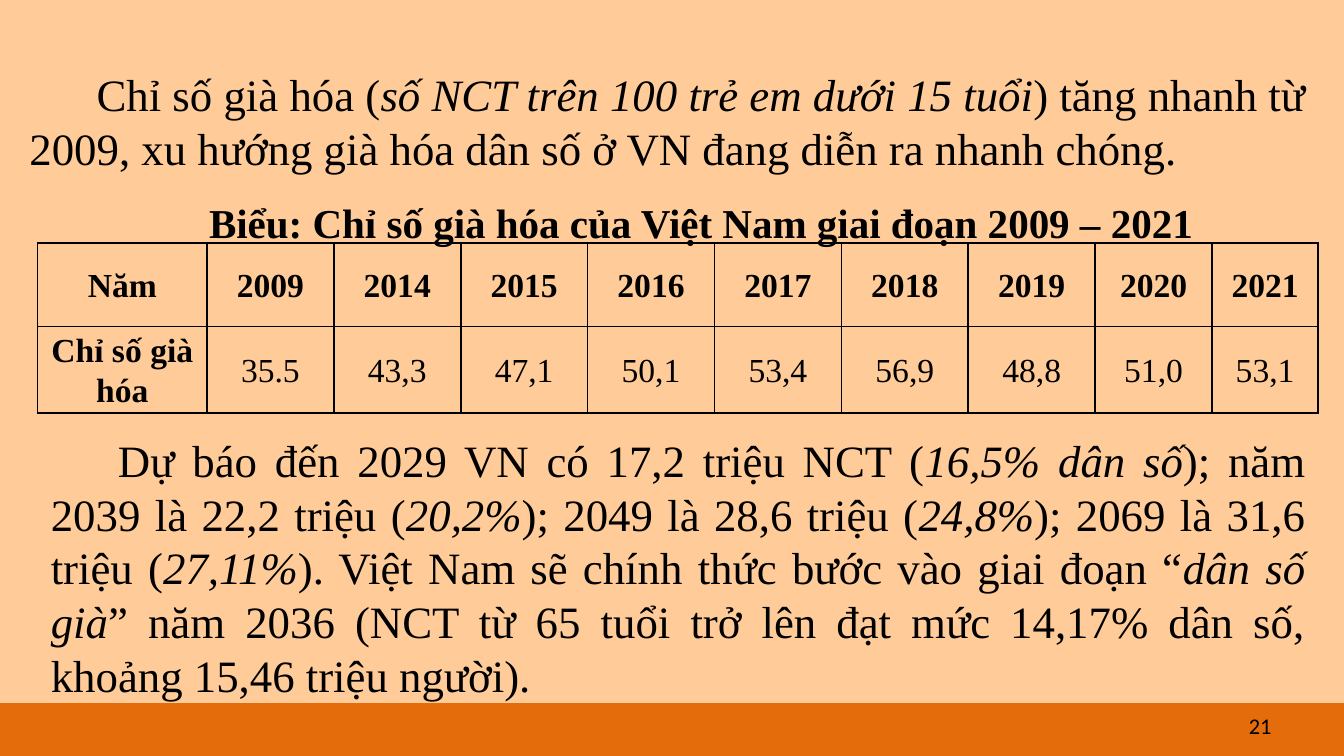
from lxml.etree import SubElement
from pptx import Presentation
from pptx.dml.color import RGBColor
from pptx.enum.shapes import MSO_SHAPE
from pptx.enum.text import MSO_ANCHOR, PP_ALIGN
from pptx.oxml.ns import qn
from pptx.util import Inches, Pt

ORANGE = RGBColor(0xE4, 0x6C, 0x0A)
PEACH = RGBColor(0xFF, 0xCC, 0x99)
BLACK = RGBColor(0, 0, 0)
SERIF = "Times New Roman"

INTRO = [
    "Chỉ số già hóa (", "số NCT trên 100 trẻ em dưới 15 tuổi",
    ") tăng nhanh từ 2009, xu hướng già hóa dân số ở VN đang diễn ra nhanh chóng.",
]
TITLE = "Biểu: Chỉ số già hóa của Việt Nam giai đoạn 2009 – 2021"
OUTLOOK = [
    "Dự báo đến 2029 VN có 17,2 triệu NCT (", "16,5% dân số",
    "); năm 2039 là 22,2 triệu (", "20,2%",
    "); 2049 là 28,6 triệu (", "24,8%",
    "); 2069 là 31,6 triệu (", "27,11%",
    "). Việt Nam sẽ chính thức bước vào giai đoạn “", "dân số già",
    "” năm 2036 (NCT từ 65 tuổi trở lên đạt mức 14,17% dân số, "
    "khoảng 15,46 triệu người).",
]
ROWS = [
    ["Năm", "2009", "2014", "2015", "2016", "2017", "2018", "2019", "2020", "2021"],
    ["Chỉ số già hóa", "35.5", "43,3", "47,1", "50,1", "53,4", "56,9", "48,8",
     "51,0", "53,1"],
]


def style(run, size, font=SERIF, bold=False, italic=False):
    """Set the look of one run."""
    run.font.name = font
    run.font.size = Pt(size)
    run.font.bold = bold
    run.font.italic = italic
    run.font.color.rgb = BLACK


def add_box(slide, box):
    """Add a wrapping text box and return its frame."""
    frame = slide.shapes.add_textbox(*map(Inches, box)).text_frame
    frame.word_wrap = True
    return frame


def indent(para, align):
    """Set alignment, first-line indent and space after a paragraph."""
    para.alignment = align
    para.space_after = Pt(12)
    props = para._p.get_or_add_pPr()
    props.set("marL", "0")
    props.set("indent", str(Inches(0.5)))


def add_body(slide, box, parts, title=None):
    """Add a justified paragraph with every second part italic, and a title."""
    frame = add_box(slide, box)
    para = frame.paragraphs[0]
    indent(para, PP_ALIGN.JUSTIFY)
    for i, part in enumerate(parts):
        run = para.add_run()
        run.text = part
        style(run, 24, italic=i % 2 == 1)
    if title:
        para = frame.add_paragraph()
        para.text = title
        indent(para, PP_ALIGN.CENTER)
        style(para.runs[0], 22, bold=True)


def add_borders(cell):
    """Draw a thin black line on each side of a cell."""
    props = cell._tc.get_or_add_tcPr()
    for side in ("lnL", "lnR", "lnT", "lnB"):
        line = SubElement(props, qn(f"a:{side}"), w=str(Pt(1)))
        fill = SubElement(line, qn("a:solidFill"))
        SubElement(fill, qn("a:srgbClr"), val=str(BLACK))


def add_grid(slide, box):
    """Add the table of the ageing index by year."""
    first, last = 1.26, [0.87, 0.79]
    even = (box[2] - first - sum(last)) / 7
    widths = [first] + [even] * 7 + last
    shape = slide.shapes.add_table(len(ROWS), len(widths), *map(Inches, box))
    table = shape.table
    table.first_row = table.horz_banding = False
    for col, width in zip(table.columns, widths):
        col.width = Inches(width)
    for r, row in enumerate(ROWS):
        table.rows[r].height = Inches(0.62)
        for c, text in enumerate(row):
            cell = table.cell(r, c)
            cell.text = text
            cell.vertical_anchor = MSO_ANCHOR.MIDDLE
            cell.margin_left = cell.margin_right = Inches(0.07)
            cell.margin_top = cell.margin_bottom = 0
            para = cell.text_frame.paragraphs[0]
            para.alignment = PP_ALIGN.CENTER
            para.line_spacing = 1.07
            style(para.runs[0], 18, bold=r == 0 or c == 0)
            add_borders(cell)
            cell.fill.background()


def add_panel(slide, box):
    """Fill the slide and lay the light panel over it."""
    back = slide.background.fill
    back.solid()
    back.fore_color.rgb = ORANGE
    panel = slide.shapes.add_shape(MSO_SHAPE.RECTANGLE, *map(Inches, box))
    panel.shadow.inherit = False
    panel.fill.solid()
    panel.fill.fore_color.rgb = PEACH
    panel.line.fill.background()


def add_number(slide, box):
    """Add the slide number."""
    frame = add_box(slide, box)
    frame.vertical_anchor = MSO_ANCHOR.MIDDLE
    para = frame.paragraphs[0]
    para.text = "21"
    para.alignment = PP_ALIGN.RIGHT
    style(para.runs[0], 12, font="Calibri")


def main():
    """Build the slide and save it."""
    deck = Presentation()
    deck.slide_width = Inches(10)
    deck.slide_height = deck.slide_width * 9 // 16
    slide = deck.slides.add_slide(deck.slide_layouts[6])
    add_panel(slide, (0, 0, 10, 5.23))
    add_body(slide, (0.12, 0.45, 9.69, 1.45), INTRO, TITLE)
    add_number(slide, (7.23, 5.25, 2.33, 0.3))
    add_grid(slide, (0.28, 1.81, 9.53, 1.26))
    add_body(slide, (0.28, 3.17, 9.53, 2.12), OUTLOOK)
    deck.save("out.pptx")


if __name__ == "__main__":
    main()
